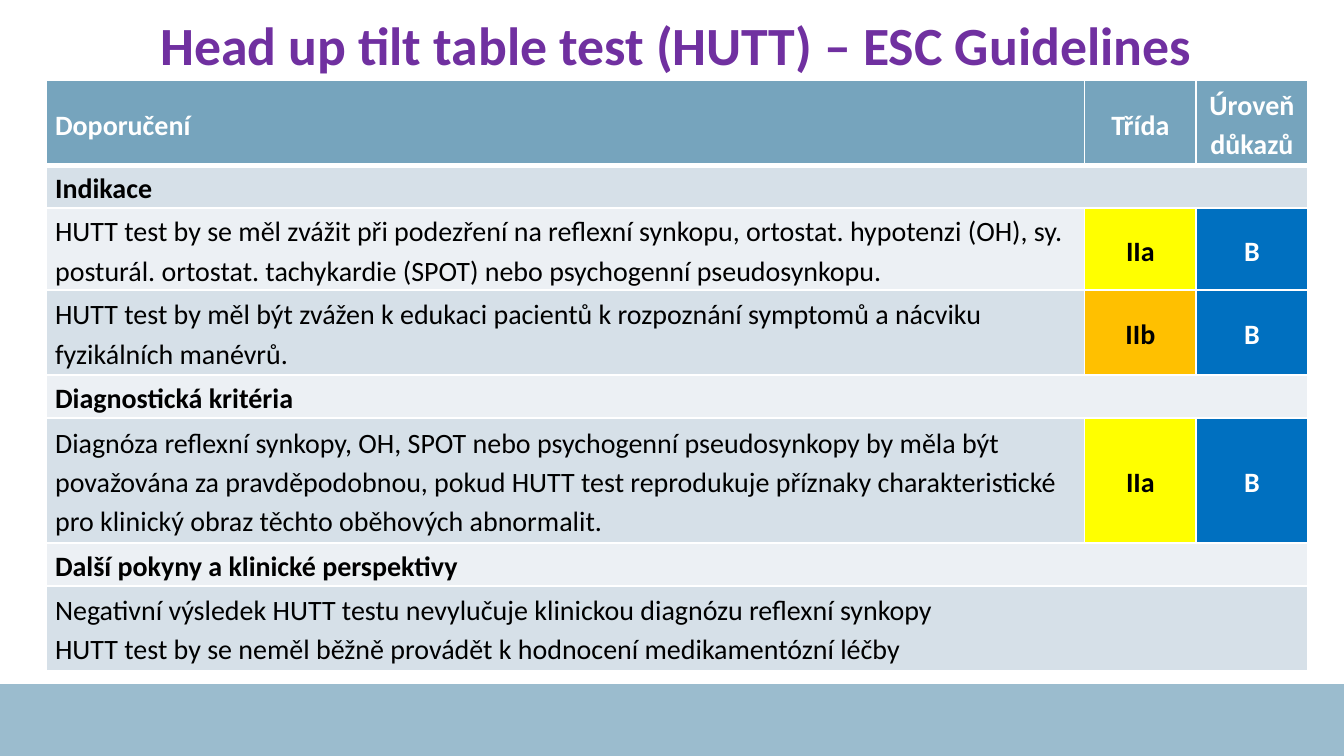
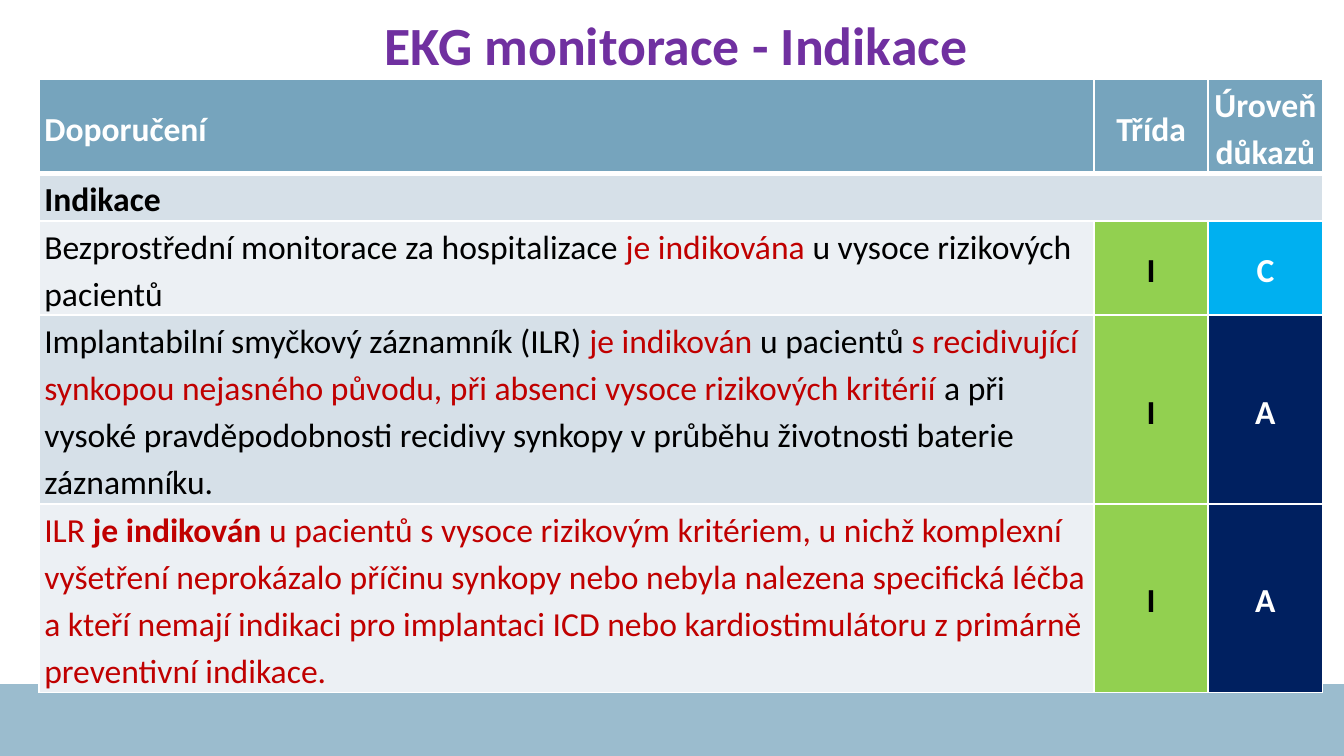
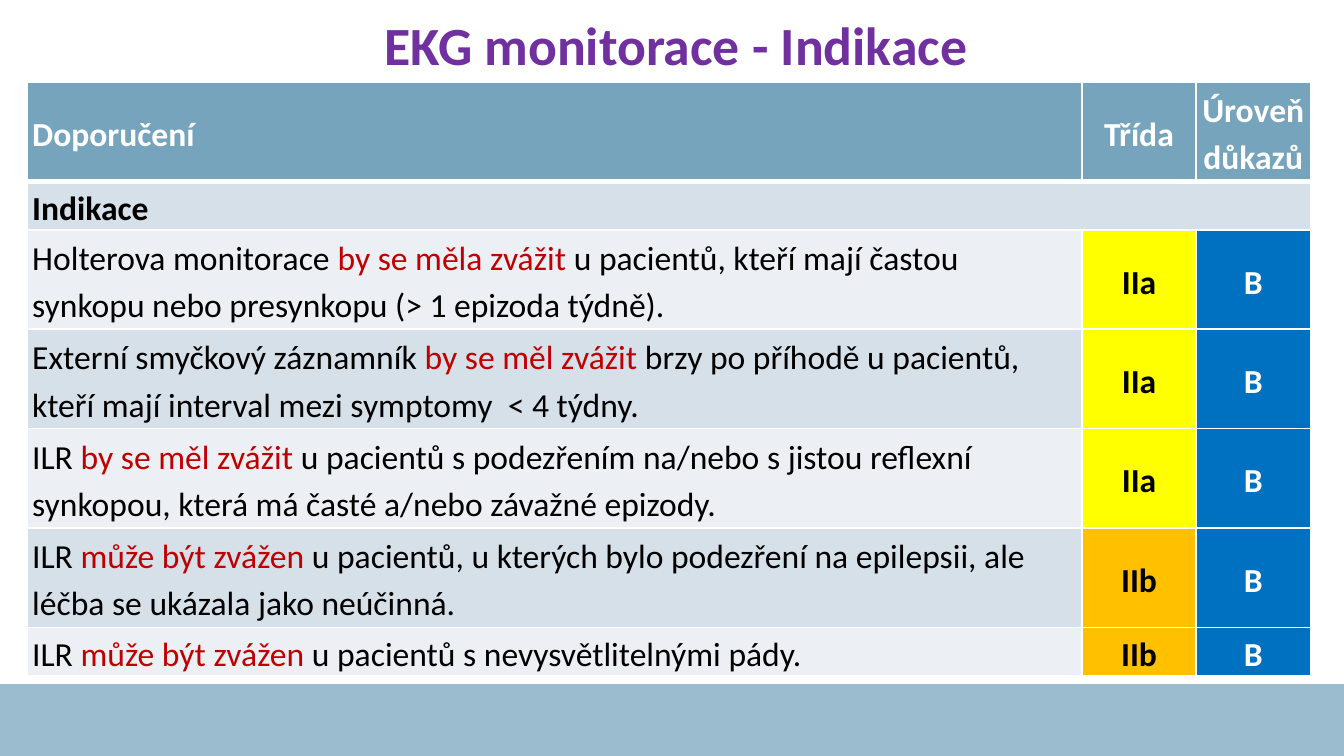
from lxml.etree import SubElement
from pptx import Presentation
from pptx.dml.color import RGBColor
from pptx.enum.shapes import MSO_SHAPE
from pptx.enum.text import MSO_ANCHOR, MSO_AUTO_SIZE, PP_ALIGN
from pptx.oxml.ns import qn
from pptx.util import Inches, Pt

HUES = {
    "head": "76A4BD", "title": "7030A0", "dark": "D6E0E8", "light": "ECF0F4",
    "white": "FFFFFF", "black": "000000", "red": "C00000",
}
CLASS = {"I": "92D050", "IIa": "FFFF00", "IIb": "FFC000"}
LEVEL = {"A": "002060", "B": "0070C0", "C": "00B0F0"}
FONT = "Calibri"
HEAD = ("Doporučení", "Třída", "Úroveň\ndůkazů")
RED = {"hue": HUES["red"]}
STRONG = {"hue": HUES["red"], "bold": True}

# A row is a heading (string), a wide note (list of paragraphs)
# or a tuple of advice, class and level.
SLIDES = [
    {
        "title": "Head up tilt table test (HUTT) – ESC Guidelines",
        "top": 0.1, "tall": 0.52, "at": (0.34, 0.6), "size": 15, "pad": 0.07,
        "cols": (7.73, 0.83, 0.83),
        "heights": (0.63, 0.32, 0.61, 0.63, 0.32, 0.93, 0.32, 0.63),
        "rows": [
            "Indikace",
            (["HUTT test by se měl zvážit při podezření na reflexní synkopu, ortostat. hypotenzi (OH), sy. "
              "posturál. ortostat. tachykardie (SPOT) nebo psychogenní pseudosynkopu."], "IIa", "B"),
            (["HUTT test by měl být zvážen k edukaci pacientů k rozpoznání symptomů a nácviku "
              "fyzikálních manévrů."], "IIb", "B"),
            "Diagnostická kritéria",
            (["Diagnóza reflexní synkopy, OH, SPOT nebo psychogenní pseudosynkopy by měla být "
              "považována za pravděpodobnou, pokud HUTT test reprodukuje příznaky charakteristické "
              "pro klinický obraz těchto oběhových abnormalit."], "IIa", "B"),
            "Další pokyny a klinické perspektivy",
            [["Negativní výsledek HUTT testu nevylučuje klinickou diagnózu reflexní synkopy"],
             ["HUTT test by se neměl běžně provádět k hodnocení medikamentózní léčby"]],
        ],
    },
    {
        "title": "EKG monitorace - Indikace",
        "top": 0.11, "tall": 0.5, "at": (0.29, 0.59), "size": 18, "pad": 0.04,
        "cols": (7.85, 0.85, 0.85),
        "heights": (0.5, 0.25, 0.25, 0.75, 0.75),
        "rows": [
            "Indikace",
            (["Bezprostřední monitorace za hospitalizace ", ("je indikována ", RED),
              "u vysoce rizikových pacientů"], "I", "C"),
            (["Implantabilní smyčkový záznamník (ILR) ", ("je indikován ", RED), "u pacientů ",
              ("s recidivující synkopou nejasného původu, při absenci vysoce rizikových kritérií", RED),
              " a při vysoké pravděpodobnosti recidivy synkopy v průběhu životnosti baterie "
              "záznamníku."], "I", "A"),
            ([("ILR ", RED), ("je indikován ", STRONG),
              ("u pacientů s vysoce rizikovým kritériem, u nichž komplexní vyšetření neprokázalo "
               "příčinu synkopy nebo nebyla nalezena specifická léčba a kteří nemají indikaci pro "
               "implantaci ICD nebo kardiostimulátoru z primárně preventivní indikace.", RED)], "I", "A"),
        ],
    },
    {
        "title": "EKG monitorace - Indikace",
        "top": 0.11, "tall": 0.5, "at": (0.2, 0.61), "size": 18, "pad": 0.04,
        "cols": (7.85, 0.85, 0.85),
        "heights": (0.74, 0.36, 0.74, 0.74, 0.74, 0.74, 0.36),
        "rows": [
            "Indikace",
            (["Holterova monitorace ", ("by se měla zvážit ", RED),
              "u pacientů, kteří mají častou synkopu nebo presynkopu (> 1 epizoda týdně)."], "IIa", "B"),
            (["Externí smyčkový záznamník ", ("by se měl zvážit ", RED),
              "brzy po příhodě u pacientů, kteří mají interval mezi symptomy  < 4 týdny."], "IIa", "B"),
            (["ILR ", ("by se měl zvážit ", RED),
              "u pacientů s podezřením na/nebo s jistou reflexní synkopou, která má časté a/nebo "
              "závažné epizody."], "IIa", "B"),
            (["ILR ", ("může být zvážen ", RED),
              "u pacientů, u kterých bylo podezření na epilepsii, ale léčba se ukázala jako "
              "neúčinná."], "IIb", "B"),
            (["ILR ", ("může být zvážen", RED), " u pacientů s nevysvětlitelnými pády."], "IIb", "B"),
        ],
    },
]


def rgb(hue):
    return RGBColor.from_string(hue)


def write(frame, paras, size=18, hue=HUES["black"], bold=False, align=PP_ALIGN.LEFT, gap=1.15):
    """Fill a frame; each paragraph is a list of strings or (string, format) runs."""
    for i, runs in enumerate(paras):
        par = frame.add_paragraph() if i else frame.paragraphs[0]
        par.alignment, par.line_spacing = align, gap
        par.space_before = par.space_after = Pt(0)
        for item in runs:
            text, own = (item, {}) if isinstance(item, str) else item
            for j, line in enumerate(text.split("\n")):
                if j:
                    par.add_line_break()
                    SubElement(par._p[-1], qn("a:rPr"), sz=str(int(size * 100)))
                run = par.add_run()
                run.text = line
                font = run.font
                font.name, font.size = FONT, Pt(size)
                font.bold = own.get("bold", bold)
                font.color.rgb = rgb(own.get("hue", hue))


def edge(cell, **widths):
    """Draw white cell borders, widths in points by side."""
    props = cell._tc.get_or_add_tcPr()
    for side in "LRTB":
        line = SubElement(props, qn("a:ln" + side), w=str(Pt(widths.get(side, 1))))
        fill = SubElement(line, qn("a:solidFill"))
        SubElement(fill, qn("a:srgbClr"), val=HUES["white"])


def put(cell, paras, fill, pad, **fmt):
    cell.margin_left = cell.margin_right = Inches(pad)
    cell.margin_top = cell.margin_bottom = 0
    cell.vertical_anchor = MSO_ANCHOR.MIDDLE
    cell.fill.solid()
    cell.fill.fore_color.rgb = rgb(fill)
    write(cell.text_frame, paras, **fmt)


def add_title(slide, plan):
    title = slide.shapes.title
    title.left, title.top = Inches(0.5), Inches(plan["top"])
    title.width, title.height = Inches(9.06), Inches(plan["tall"])
    frame = title.text_frame
    frame.margin_left = frame.margin_right = Inches(0.06)
    frame.margin_top = frame.margin_bottom = Inches(0.03)
    frame.vertical_anchor = MSO_ANCHOR.MIDDLE
    frame.word_wrap, frame.auto_size = True, MSO_AUTO_SIZE.NONE
    write(frame, [[plan["title"]]], size=28.8, hue=HUES["title"], bold=True,
          align=PP_ALIGN.CENTER, gap=0.9)


def add_grid(slide, plan):
    cols, heights = plan["cols"], plan["heights"]
    left, top = plan["at"]
    grid = slide.shapes.add_table(len(heights), len(cols), Inches(left), Inches(top),
                                  Inches(sum(cols)), Inches(sum(heights))).table
    for col, width in zip(grid.columns, cols):
        col.width = Inches(width)
    for row, height in zip(grid.rows, heights):
        row.height = Inches(height)
    base = {"pad": plan["pad"], "size": plan["size"]}
    mid = {**base, "bold": True, "align": PP_ALIGN.CENTER}

    for c, text in enumerate(HEAD):
        cell = grid.cell(0, c)
        edge(cell, B=3)
        put(cell, [[text]], HUES["head"], hue=HUES["white"],
            **(mid if c else {**base, "bold": True}))

    for r, row in enumerate(plan["rows"], 1):
        first = grid.cell(r, 0)
        shade = HUES["dark" if r % 2 else "light"]
        rated = isinstance(row, tuple)
        if not rated:
            first.merge(grid.cell(r, 2))
        for c in range(3 if rated else 1):
            edge(grid.cell(r, c), T=3 if r == 1 else 1)
        if rated:
            text, grade, proof = row
            put(first, [text], shade, **base)
            put(grid.cell(r, 1), [[grade]], CLASS[grade], **mid)
            put(grid.cell(r, 2), [[proof]], LEVEL[proof], hue=HUES["white"], **mid)
        elif isinstance(row, str):
            put(first, [[row]], shade, bold=True, **base)
        else:
            put(first, row, shade, **base)


def add_band(slide, layout, bottom):
    """Place the bottom band on the layout, behind all else."""
    top = Inches(5.09)
    band = slide.shapes.add_shape(MSO_SHAPE.RECTANGLE, 0, top, Inches(10), bottom - top)
    band.shadow.inherit = False
    band.fill.solid()
    band.fill.fore_color.rgb = rgb(HUES["head"])
    band.line.fill.background()
    tint = next(band.element.iter(qn("a:srgbClr")))
    SubElement(tint, qn("a:alpha"), val="73000")
    band.element.nvSpPr.cNvPr.set("id", "99")
    layout.shapes.element.insert(2, band.element)


def main():
    deck = Presentation()
    deck.slide_width = Inches(10)
    deck.slide_height = deck.slide_width * 9 // 16
    layout = deck.slide_layouts[5]
    for sheet in (layout, deck.slide_master):
        for spot in list(sheet.placeholders)[-3:]:
            sheet.shapes.element.remove(spot.element)
    for i, plan in enumerate(SLIDES):
        slide = deck.slides.add_slide(layout)
        if i == 0:
            add_band(slide, layout, deck.slide_height)
        add_title(slide, plan)
        add_grid(slide, plan)
    deck.save("out.pptx")


if __name__ == "__main__":
    main()
